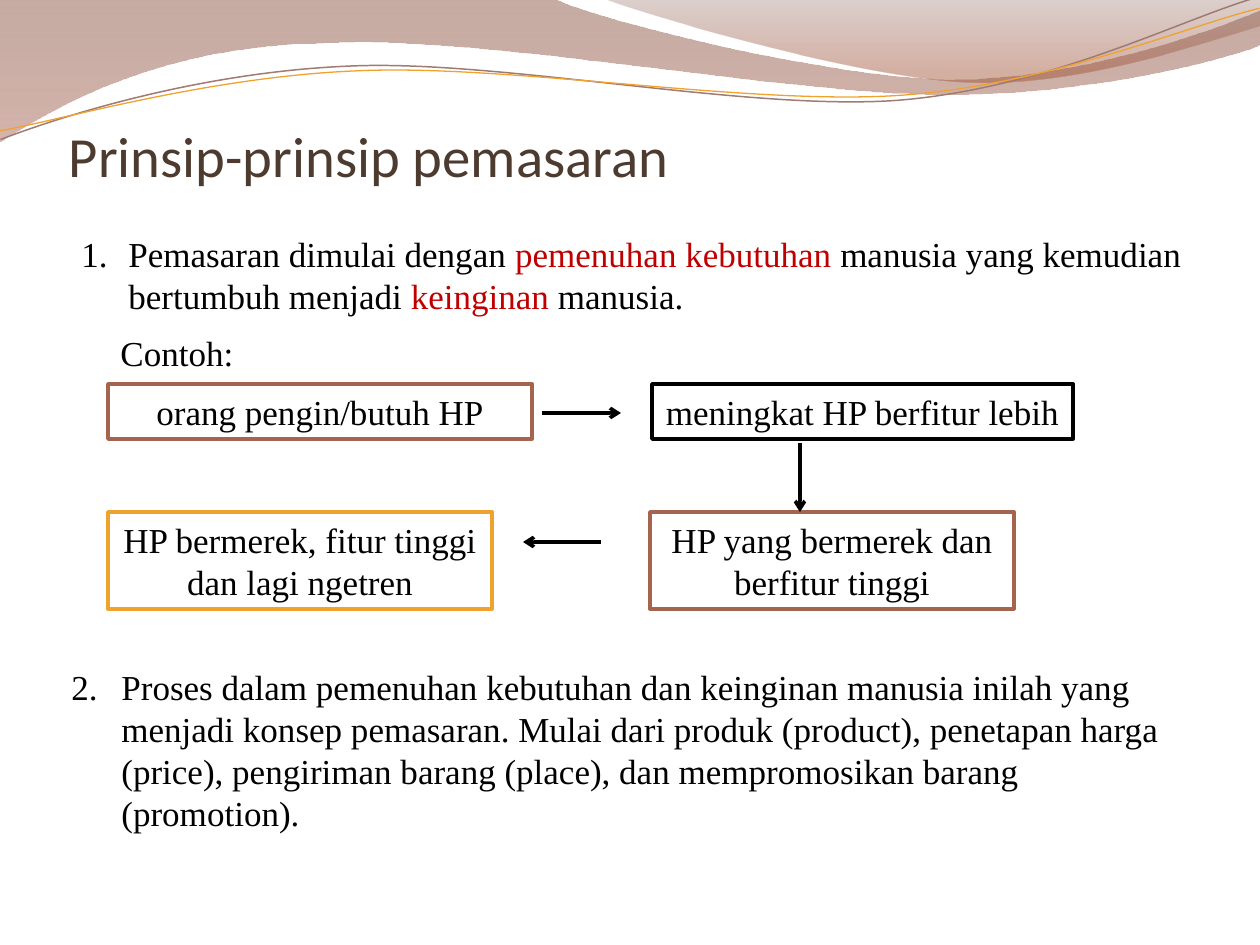
"""Build a slide on marketing principles with a flow of four example boxes."""
import dataclasses
import typing

import lxml.etree
import pptx
import pptx.dml.color
import pptx.enum.shapes
import pptx.enum.text
import pptx.oxml.ns
import pptx.util

EMU_PER_PX = 914400 / 126
SERIF = "Times New Roman"
BLACK, WHITE, RED, BROWN, ORANGE = "000000", "FFFFFF", "C00000", "A5644E", "F0A22E"
ALIGN = pptx.enum.text.PP_ALIGN
ANCHOR = pptx.enum.text.MSO_ANCHOR
qn = pptx.oxml.ns.qn
Point = tuple[int, int]


class Area(typing.NamedTuple):
    left: int
    top: int
    width: int
    height: int


class Run(typing.NamedTuple):
    text: str
    color: str = BLACK
    size: float = 20
    font: str = SERIF


class Stop(typing.NamedTuple):
    position: float
    color: str
    opacity: int


@dataclasses.dataclass
class Wave:
    start: Point
    segments: list[list[Point]]
    stops: tuple[Stop, ...] = ()
    line: str = ""
    weight: float = 0
    rotation: float = 0


@dataclasses.dataclass
class FlowBox:
    area: Area
    text: str
    border: str
    wrap: bool = True


@dataclasses.dataclass
class Item:
    area: Area
    number: int
    indent: int
    runs: list[Run]


WAVES = [
    Wave((0, 0), [
        [(554, -1)], [(600, 21), (837, 79), (955, 79)], [(1075, 79), (1207, 33), (1260, 11)],
        [(1261, 45)], [(1239, 55), (1096, 96), (940, 94)], [(783, 94), (481, 35), (324, 43)],
        [(163, 45), (58, 105), (-1, 142)], [(0, 0)],
    ], stops=(Stop(0, "814733", 45), Stop(1, "B17667", 55))),
    Wave((604, -1), [
        [(641, 14), (859, 78), (969, 82)], [(1079, 87), (1211, 40), (1260, 26)],
        [(1260, 0)], [(604, -1)],
    ], stops=(Stop(0, "8C6359", 30), Stop(0.8, "A15135", 45))),
    Wave((-2, 110), [
        [(58, 90), (199, 52), (350, 53)], [(499, 53), (745, 117), (896, 113)],
        [(1049, 108), (1184, 45), (1260, 27)],
    ], line="A07B71", weight=0.85, rotation=357.3),
    Wave((-2, 101), [
        [(57, 94), (207, 57), (357, 58)], [(509, 58), (750, 112), (902, 108)],
        [(1052, 104), (1189, 52), (1262, 38)],
    ], line=ORANGE, weight=0.75, rotation=357.3),
]
BOXES = [
    FlowBox(Area(108, 384, 424, 55), "orang pengin/butuh HP", BROWN),
    FlowBox(Area(652, 384, 421, 55), "meningkat HP berfitur lebih", BLACK, wrap=False),
    FlowBox(Area(650, 512, 364, 97), "HP yang bermerek dan berfitur tinggi", BROWN),
    FlowBox(Area(108, 512, 384, 97), "HP bermerek, fitur tinggi dan lagi ngetren", ORANGE),
]
ARROWS = [((542, 413), (621, 413)), ((601, 542), (523, 542)), ((800, 443), (800, 512))]
ITEMS = [
    Item(Area(69, 226, 1191, 118), 1, 47, [
        Run("Pemasaran dimulai dengan "), Run("pemenuhan kebutuhan ", RED),
        Run("manusia yang kemudian bertumbuh menjadi "), Run("keinginan ", RED), Run("manusia."),
    ]),
    Item(Area(59, 659, 1113, 183), 2, 50, [
        Run("Proses dalam pemenuhan kebutuhan dan keinginan manusia inilah yang menjadi konsep "
            "pemasaran. Mulai dari produk (product), penetapan harga (price), pengiriman barang "
            "(place), dan mempromosikan barang (promotion)."),
    ]),
]


def px(length: int) -> pptx.util.Emu:
    return pptx.util.Emu(round(length * EMU_PER_PX))


def rgb(color: str) -> pptx.dml.color.RGBColor:
    return pptx.dml.color.RGBColor.from_string(color)


def place(area: Area) -> list[pptx.util.Emu]:
    return [px(length) for length in area]


def add_runs(para, runs: list[Run]) -> None:
    for run in runs:
        span = para.add_run()
        span.text = run.text
        span.font.name = run.font
        span.font.size = pptx.util.Pt(run.size)
        span.font.color.rgb = rgb(run.color)


def add_text(page, area: Area, runs: list[Run], wrap: bool = True):
    box = page.shapes.add_textbox(*place(area))
    box.text_frame.word_wrap = wrap
    add_runs(box.text_frame.paragraphs[0], runs)
    return box


def bend(shape, segments: list[list[Point]]) -> None:
    """Turn each three-point segment of an outline into one cubic curve."""
    steps = shape.element.spPr.iter(qn("a:lnTo"))
    remaining = iter(list(steps))
    for segment in segments:
        first, *others = [next(remaining) for _ in segment]
        if others:
            curve = lxml.etree.Element(qn("a:cubicBezTo"))
            first.addprevious(curve)
            for step in (first, *others):
                curve.append(step[0])
                step.getparent().remove(step)


def draw_wave(page, wave: Wave) -> None:
    points = [(px(x), px(y)) for segment in wave.segments for x, y in segment]
    builder = page.shapes.build_freeform(*map(px, wave.start))
    builder.add_line_segments(points, close=bool(wave.stops))
    shape = builder.convert_to_shape()
    bend(shape, wave.segments)
    shape.shadow.inherit = False
    shape.rotation = wave.rotation
    if not wave.stops:
        shape.fill.background()
        shape.line.color.rgb = rgb(wave.line)
        shape.line.width = pptx.util.Pt(wave.weight)
        return
    shape.line.fill.background()
    shape.fill.gradient()
    shape.fill.gradient_angle = 270
    for target, stop in zip(shape.fill.gradient_stops, wave.stops):
        target.position = stop.position
        target.color.rgb = rgb(stop.color)
    colors = shape.element.spPr.iterfind(".//" + qn("a:gs") + "/*")
    for color, stop in zip(colors, wave.stops):
        lxml.etree.SubElement(color, qn("a:alpha")).set("val", str(stop.opacity * 1000))


def draw_flow_box(page, item: FlowBox) -> None:
    box = page.shapes.add_shape(pptx.enum.shapes.MSO_SHAPE.RECTANGLE, *place(item.area))
    box.shadow.inherit = False
    box.fill.solid()
    box.fill.fore_color.rgb = rgb(WHITE)
    box.line.color.rgb = rgb(item.border)
    box.line.width = pptx.util.Pt(2)
    box.text_frame.word_wrap = item.wrap
    box.text_frame.vertical_anchor = ANCHOR.MIDDLE
    para = box.text_frame.paragraphs[0]
    para.alignment = ALIGN.CENTER
    add_runs(para, [Run(item.text)])


def draw_arrow(page, start: Point, end: Point) -> None:
    arrow = page.shapes.add_connector(
        pptx.enum.shapes.MSO_CONNECTOR.STRAIGHT, *map(px, (*start, *end)))
    arrow.line.color.rgb = rgb(BLACK)
    arrow.line.width = pptx.util.Pt(2)
    outline = arrow.element.spPr.find(qn("a:ln"))
    lxml.etree.SubElement(outline, qn("a:tailEnd")).set("type", "arrow")
    lxml.etree.SubElement(arrow.element.spPr, qn("a:effectLst"))


def draw_item(page, item: Item) -> None:
    para = add_text(page, item.area, item.runs).text_frame.paragraphs[0]
    para.space_before = pptx.util.Pt(12)
    props = para._p.get_or_add_pPr()
    props.set("marL", str(px(item.indent)))
    props.set("indent", str(-px(item.indent)))
    number = lxml.etree.SubElement(props, qn("a:buAutoNum"))
    number.set("type", "arabicPeriod")
    number.set("startAt", str(item.number))


def main() -> None:
    deck = pptx.Presentation()
    deck.slide_width, deck.slide_height = px(1260), px(945)
    page = deck.slides.add_slide(deck.slide_layouts[6])
    for wave in WAVES:
        draw_wave(page, wave)
    title = add_text(page, Area(69, 108, 1134, 81),
                     [Run("Prinsip-prinsip pemasaran", "4E3B30", 32.4, "Calibri")])
    frame = title.text_frame
    frame.vertical_anchor = ANCHOR.BOTTOM
    frame.margin_left = frame.margin_right = frame.margin_bottom = 0
    for item in ITEMS:
        draw_item(page, item)
    for box in BOXES:
        draw_flow_box(page, box)
    add_text(page, Area(108, 325, 147, 55), [Run("Contoh:")], wrap=False)
    for start, end in ARROWS:
        draw_arrow(page, start, end)
    deck.save("out.pptx")


if __name__ == "__main__":
    main()
